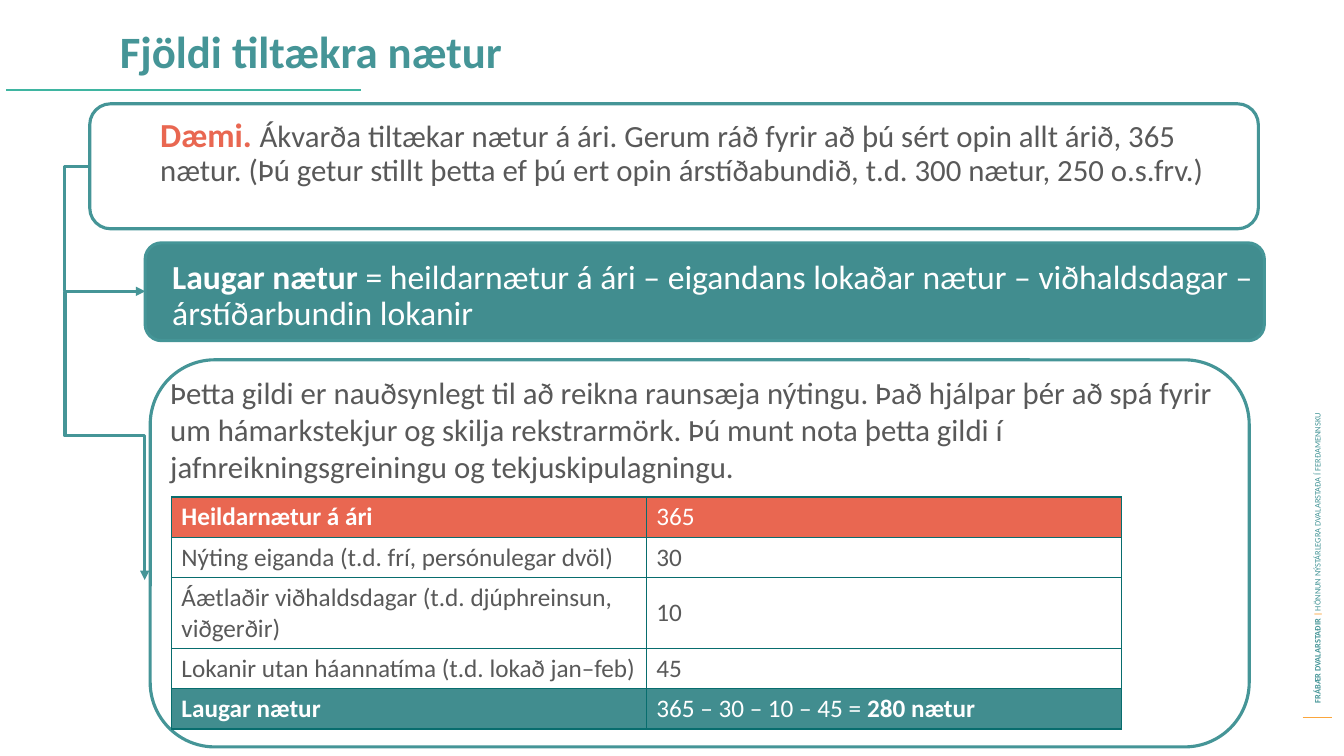
from dataclasses import dataclass
from typing import Optional

from lxml.etree import SubElement
from pptx import Presentation
from pptx.dml.color import RGBColor
from pptx.enum.shapes import MSO_CONNECTOR as Route, MSO_SHAPE as Preset
from pptx.enum.text import MSO_ANCHOR as Anchor
from pptx.oxml.ns import qn
from pptx.util import Inches, Pt

COLORS = {
    "teal": "459597", "deep": "418D8F", "mint": "3FB5A1", "border": "086D6E",
    "coral": "E96751", "gray": "595959", "white": "FFFFFF", "amber": "FBA63D",
}
FONT = "Calibri"


@dataclass
class Span:
    text: str
    size: float
    color: str = "gray"
    bold: bool = False


@dataclass
class Panel:
    left: float
    top: float
    width: float
    height: float
    fill: Optional[str] = None


@dataclass
class TextBlock:
    left: float
    top: float
    width: float
    height: float
    spans: list[Span]
    line_spacing: float = 1.0
    anchor: Anchor = Anchor.TOP
    rotation: float = 0


@dataclass
class Line:
    start: tuple[float, float]
    end: tuple[float, float]
    color: str
    width: float
    bend: Optional[float] = None
    rotation: int = 0


@dataclass
class Row:
    label: Span
    value: list[Span]
    height: float = 0.4
    fill: Optional[str] = None


def rgb(name: str) -> RGBColor:
    return RGBColor.from_string(COLORS[name])


def add_span(para, text: str, *, size: float, color: str, bold: bool) -> None:
    span = para.add_run()
    span.text = text
    span.font.name = FONT
    span.font.size = Pt(size)
    span.font.bold = bold
    span.font.color.rgb = rgb(color)


def add_spans(para, spans: list[Span]) -> None:
    for span in spans:
        add_span(para, span.text, size=span.size, color=span.color, bold=span.bold)


def set_fill(fill, color: Optional[str]) -> None:
    if color:
        fill.solid()
        fill.fore_color.rgb = rgb(color)
    else:
        fill.background()


def draw_panel(page, panel: Panel) -> None:
    shape = page.shapes.add_shape(
        Preset.FLOWCHART_ALTERNATE_PROCESS, Inches(panel.left), Inches(panel.top),
        Inches(panel.width), Inches(panel.height))
    shape.shadow.inherit = False
    set_fill(shape.fill, panel.fill)
    shape.line.color.rgb = rgb("teal")
    shape.line.width = Pt(2.25)


def draw_text(page, block: TextBlock) -> None:
    box = page.shapes.add_textbox(
        Inches(block.left), Inches(block.top), Inches(block.width), Inches(block.height))
    box.rotation = block.rotation
    box.text_frame.word_wrap = True
    box.text_frame.vertical_anchor = block.anchor
    para = box.text_frame.paragraphs[0]
    para.line_spacing = block.line_spacing
    add_spans(para, block.spans)


def draw_line(page, line: Line) -> None:
    route = Route.STRAIGHT if line.bend is None else Route.ELBOW
    connector = page.shapes.add_connector(
        route, *(Inches(value) for value in line.start + line.end))
    connector.line.color.rgb = rgb(line.color)
    connector.line.width = Pt(line.width)
    properties = connector._element.spPr
    SubElement(properties, qn("a:effectLst"))
    if line.bend is not None:
        guides = properties.find(qn("a:prstGeom")).find(qn("a:avLst"))
        SubElement(guides, qn("a:gd"), name="adj1", fmla=f"val {round(line.bend * 100000)}")
        SubElement(properties.find(qn("a:ln")), qn("a:tailEnd"), type="triangle")
    if line.rotation:
        properties.find(qn("a:xfrm")).set("rot", str(line.rotation * 60000))


def draw_cell(cell, spans: list[Span], fill: Optional[str]) -> None:
    cell.vertical_anchor = Anchor.MIDDLE
    add_spans(cell.text_frame.paragraphs[0], spans)
    properties = cell._tc.get_or_add_tcPr()
    for side in ("lnL", "lnR", "lnT", "lnB"):
        edge = SubElement(properties, qn(f"a:{side}"), w=str(Pt(1)))
        SubElement(SubElement(edge, qn("a:solidFill")), qn("a:srgbClr"), val=COLORS["border"])
    set_fill(cell.fill, fill)


def draw_table(page, rows: list[Row]) -> None:
    total = sum(row.height for row in rows)
    table = page.shapes.add_table(
        len(rows), 2, Inches(1.7), Inches(4.93), Inches(9.42), Inches(total)).table
    table.first_row = table.horz_banding = False
    for index, row in enumerate(rows):
        table.rows[index].height = Inches(row.height)
        draw_cell(table.cell(index, 0), [row.label], row.fill)
        draw_cell(table.cell(index, 1), row.value, row.fill)


PANELS = [
    Panel(1.44, 2.41, 11.1, 0.97, "deep"),
    Panel(0.89, 1.03, 11.59, 1.24),
    Panel(1.49, 3.57, 10.9, 3.84),
]
LINES = [
    Line((12.92, 7.12), (13.21, 7.12), "amber", 0.75),
    Line((0.06, 0.89), (3.58, 0.89), "mint", 1.5),
    Line((0.89, 1.65), (1.44, 2.89), "teal", 2.25, bend=-0.456),
    Line((2.47, 3.93), (-0.39, 4.72), "teal", 2.25, bend=0.5, rotation=270),
]
TEXTS = [
    TextBlock(10.18, 4.09, 5.77, 0.2, [
        Span("FRÁBÆR DVALARSTAÐIR ", 6, "teal", True), Span("| ", 6, "amber", True),
        Span("HÖNNUN NÝSTÁRLEGRA DVALARSTAÐA Í FERÐAMENNSKU", 6, "teal"),
    ], anchor=Anchor.MIDDLE, rotation=270),
    TextBlock(1.09, 0.25, 11.61, 0.88, [Span("Fjöldi tiltækra nætur", 32, "teal", True)], 0.9),
    TextBlock(1.49, 1.13, 10.89, 0.88, [
        Span("Dæmi. ", 24, "coral", True),
        Span("Ákvarða tiltækar nætur á ári. Gerum ráð fyrir að þú sért opin allt árið, 365 nætur. "
             "(Þú getur stillt þetta ef þú ert opin árstíðabundið, t.d. 300 nætur, 250 o.s.frv.)", 22),
    ], 0.9),
    TextBlock(1.61, 2.5, 10.93, 0.88, [
        Span("Laugar nætur ", 24, "white", True),
        Span("= heildarnætur á ári – eigandans lokaðar nætur – viðhaldsdagar – "
             "árstíðarbundin lokanir", 24, "white"),
    ], 0.9, Anchor.MIDDLE),
    TextBlock(1.59, 3.66, 10.74, 0.88, [
        Span("Þetta gildi er nauðsynlegt til að reikna raunsæja nýtingu. Það hjálpar þér að spá "
             "fyrir um hámarkstekjur og skilja rekstrarmörk. Þú munt nota þetta gildi í "
             "jafnreikningsgreiningu og tekjuskipulagningu.", 22)]),
]
ROWS = [
    Row(Span("Heildarnætur á ári", 18, "white", True), [Span("365", 18, "white")], fill="coral"),
    Row(Span("Nýting eiganda (t.d. frí, persónulegar dvöl)", 18), [Span("30", 18)]),
    Row(Span("Áætlaðir viðhaldsdagar (t.d. djúphreinsun, viðgerðir)", 18), [Span("10", 18)], 0.7),
    Row(Span("Lokanir utan háannatíma (t.d. lokað jan–feb)", 18), [Span("45", 18)]),
    Row(Span("Laugar nætur", 18, "white", True), [
        Span("365 – 30 – 10 – 45 =", 18, "white"), Span(" 280 nætur", 18, "white", True),
    ], fill="deep"),
]


def main() -> None:
    deck = Presentation()
    deck.slide_width, deck.slide_height = Inches(13.33), Inches(7.5)
    page = deck.slides.add_slide(deck.slide_layouts[6])
    # Frames and connecting lines
    for panel in PANELS:
        draw_panel(page, panel)
    for line in LINES:
        draw_line(page, line)
    # Wording and the worked example
    for block in TEXTS:
        draw_text(page, block)
    draw_table(page, ROWS)
    deck.save("out.pptx")


if __name__ == "__main__":
    main()
